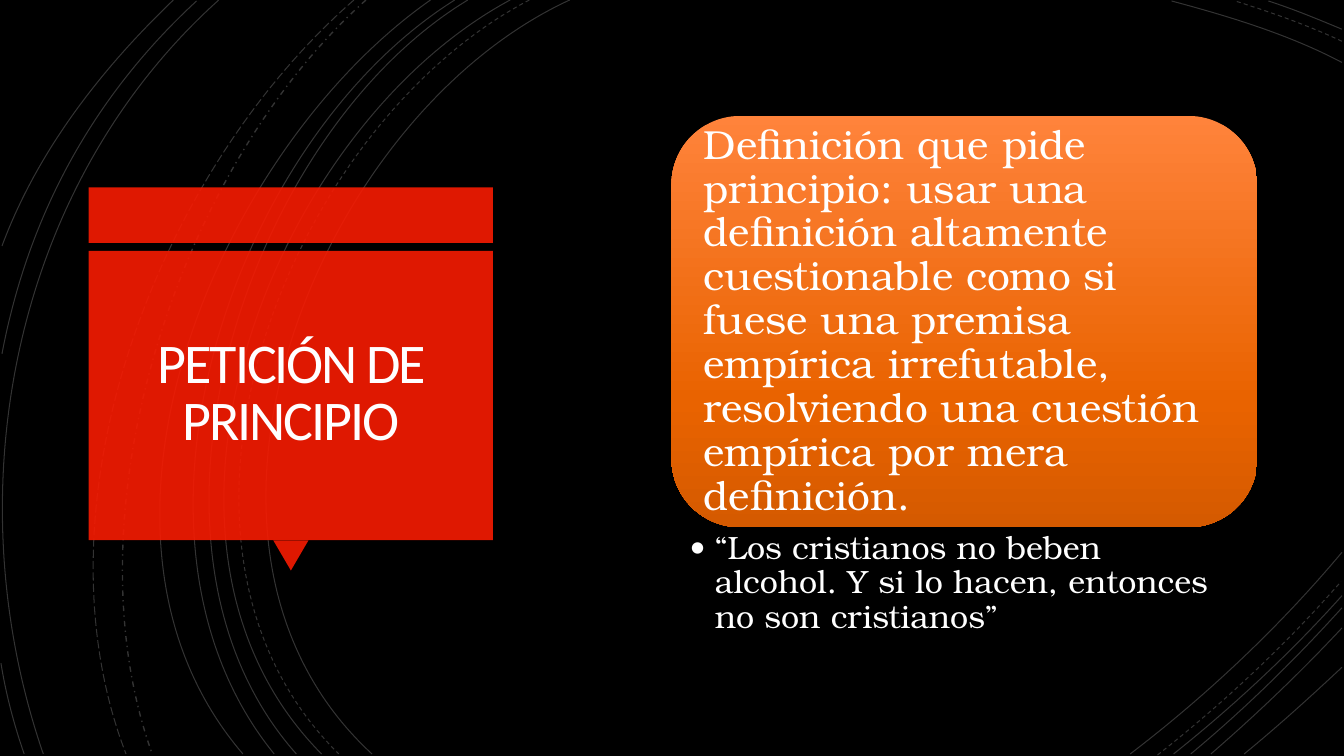
import copy

import pptx
import pptx.dml.color
import pptx.enum.dml
import pptx.enum.shapes
import pptx.enum.text
import pptx.oxml
import pptx.oxml.ns
import pptx.util

PX = 9144  # EMU per px, 100 px to the inch
SLIDE_WIDTH, SLIDE_HEIGHT = 1333, 750
SHAPE = pptx.enum.shapes.MSO_SHAPE
DASH = pptx.enum.dml.MSO_LINE
ANCHOR = pptx.enum.text.MSO_ANCHOR
ALIGN = pptx.enum.text.PP_ALIGN
HEADING_FONT, BODY_FONT = "Calibri", "TeX Gyre Bonum"
WHITE, RED, BLACK, NEAR_BLACK = "FFFFFF", "F81B02", "000000", "000001"

# Each arc: start, two control points and end, in px, grouped by dash style
ARCS = {
    DASH.SOLID: [
        (565, 0, 315, 115, 143, 540, 369, 748),
        (506, 0, 270, 127, 110, 537, 319, 748),
        (464, 0, 244, 133, 110, 541, 294, 748),
        (451, 0, 231, 138, 97, 533, 272, 748),
        (427, 0, 217, 147, 53, 529, 241, 748),
        (217, 0, 11, 185, -46, 490, 43, 748),
        (195, 1, 92, 96, 28, 214, 2, 351),
        (172, 0, 100, 69, 37, 150, 2, 244),
        (1, 658, 6, 689, 14, 719, 24, 748),
        (1331, 62, 1278, 34, 1218, 16, 1162, 1),
        (1331, 29, 1307, 19, 1283, 9, 1258, 1),
        (1121, 748, 1197, 690, 1269, 622, 1331, 548),
        (1164, 748, 1223, 701, 1280, 648, 1331, 591),
        (1181, 748, 1234, 704, 1284, 655, 1331, 603),
        (1201, 748, 1246, 709, 1290, 667, 1331, 623),
        (1234, 748, 1267, 721, 1299, 692, 1331, 662),
    ],
    DASH.DASH: [
        (525, 0, 285, 125, 123, 537, 336, 748),
        (1331, 41, 1297, 25, 1260, 12, 1225, 1),
        (1148, 749, 1213, 698, 1275, 640, 1330, 577),
    ],
    DASH.DASH_DOT: [(363, 0, 176, 166, 65, 509, 151, 748)],
    DASH.LONG_DASH: [(351, 0, 157, 169, 29, 499, 125, 748)],
}


def color(hex_string):
    return pptx.dml.color.RGBColor.from_string(hex_string)


def emu(*lengths):
    return [length * PX for length in lengths]


def set_opacity(element, percent):
    """Make the solid colour inside a fill or line element partly transparent."""
    rgb = element.find(".//" + pptx.oxml.ns.qn("a:srgbClr"))
    rgb.append(pptx.oxml.parse_xml(
        f'<a:alpha {pptx.oxml.ns.nsdecls("a")} val="{percent * 1000}"/>'))


def add_curve(slide, arc):
    """Add an open freeform made of one cubic curve."""
    start, *others = zip(arc[::2], arc[1::2])
    builder = slide.shapes.build_freeform(*start, scale=PX)
    builder.add_line_segments(others, close=False)
    curve = builder.convert_to_shape()
    outline = curve._element.spPr.find(".//" + pptx.oxml.ns.qn("a:path"))
    bezier = pptx.oxml.parse_xml(f'<a:cubicBezTo {pptx.oxml.ns.nsdecls("a")}/>')
    for segment in outline.findall(pptx.oxml.ns.qn("a:lnTo")):
        bezier.append(segment[0])
        outline.remove(segment)
    outline.append(bezier)
    return curve


def draw_arcs(slide):
    for dash, arcs in ARCS.items():
        for arc in arcs:
            curve = add_curve(slide, arc)
            curve.shadow.inherit = False
            curve.fill.background()
            curve.line.color.rgb = color(WHITE)
            curve.line.width = pptx.util.Pt(1 if dash == DASH.DASH_DOT else 0.75)
            curve.line.dash_style = dash
            set_opacity(curve.line._get_or_add_ln(), 20)


def add_plain_shape(slide, kind, box, hex_string, opacity=100):
    shape = slide.shapes.add_shape(kind, *emu(*box))
    shape.shadow.inherit = False
    shape.line.fill.background()
    shape.fill.solid()
    shape.fill.fore_color.rgb = color(hex_string)
    if opacity < 100:
        set_opacity(shape._element.spPr, opacity)
    return shape


def draw_backdrop(slide, left, top, width, height):
    # Full background and the darker right side
    add_plain_shape(slide, SHAPE.RECTANGLE, (left, top, width, height), BLACK)
    add_plain_shape(slide, SHAPE.RECTANGLE,
                    (left + 577, top, width - 577, height), NEAR_BLACK, 85)


def write_text(shape, text, size, font, insets, anchor, line_spacing,
               align=ALIGN.LEFT, hex_string=WHITE):
    frame = shape.text_frame
    frame.text = text
    frame.word_wrap = True
    frame.auto_size = pptx.enum.text.MSO_AUTO_SIZE.NONE
    frame.vertical_anchor = anchor
    (frame.margin_left, frame.margin_top,
     frame.margin_right, frame.margin_bottom) = emu(*insets)
    paragraph = frame.paragraphs[0]
    paragraph.alignment = align
    paragraph.line_spacing = line_spacing
    run = paragraph.runs[0]
    run.font.size = pptx.util.Pt(size)
    run.font.name = font
    run.font.color.rgb = color(hex_string)
    return paragraph


def draw_title(slide, left, top, width, height):
    # Red banner, pointer and panel
    panel_top, panel_height = top + 63, height - 93
    parts = [
        (SHAPE.RECTANGLE, (left, top, width, 55), 0),
        (SHAPE.ISOSCELES_TRIANGLE, (left + 183, top + height - 30, 35, 30), 180),
        (SHAPE.RECTANGLE, (left, panel_top, width, panel_height), 0),
    ]
    for kind, box, rotation in parts:
        part = add_plain_shape(slide, kind, box, RED, 90)
        part.rotation = rotation

    # Title placeholder, moved above the panel
    title = slide.shapes.title
    title.left, title.top, title.width, title.height = emu(
        left + 9, panel_top + 9, width - 18, panel_height - 19)
    slide.shapes._spTree.append(title._element)
    paragraph = write_text(title, "PETICIÓN DE PRINCIPIO", 40, HEADING_FONT,
                           (25, 25, 25, 25), ANCHOR.MIDDLE, 0.85, ALIGN.CENTER,
                           "FFFEFF")
    paragraph.runs[0]._r.get_or_add_rPr().set("spc", "-150")


def draw_definition(slide, left, top, width, height):
    # Orange card
    stops = [(0, "FF833B"), (0.69, "E96300"), (1, "D55A00")]
    card = add_plain_shape(slide, SHAPE.ROUNDED_RECTANGLE,
                           (left, top, width, height), stops[0][1])
    card.fill.gradient()
    card.fill.gradient_angle = 270
    stop_list = card._element.spPr.find(".//" + pptx.oxml.ns.qn("a:gsLst"))
    stop_list.insert(1, copy.deepcopy(stop_list[0]))
    for stop, (position, hex_string) in zip(card.fill.gradient_stops, stops):
        stop.position = position
        stop.color.rgb = color(hex_string)

    # Definition inside the card
    definition = slide.shapes.add_textbox(
        *emu(left + 20, top + 20, width - 40, height - 40))
    write_text(definition,
               "Definición que pide principio: usar una definición altamente "
               "cuestionable como si fuese una premisa empírica irrefutable, "
               "resolviendo una cuestión empírica por mera definición.",
               29, BODY_FONT, (12, 12, 12, 12), ANCHOR.MIDDLE, 0.9)

    # Bulleted example under the card
    example = slide.shapes.add_textbox(*emu(left, top + height, width, 112))
    paragraph = write_text(example,
                           "“Los cristianos no beben alcohol. Y si lo hacen, "
                           "entonces no son cristianos”",
                           23, BODY_FONT, (18, 4, 23, 4), ANCHOR.TOP, 0.9)
    properties = paragraph._p.get_or_add_pPr()
    indent = 25 * PX
    properties.set("lvl", "1")
    properties.set("marL", str(indent))
    properties.set("indent", str(-indent))
    for bullet in (f'buFont {pptx.oxml.ns.nsdecls("a")} typeface="{HEADING_FONT}"',
                   f'buChar {pptx.oxml.ns.nsdecls("a")} char="•"'):
        properties.append(pptx.oxml.parse_xml(f"<a:{bullet}/>"))


def main():
    presentation = pptx.Presentation()
    presentation.slide_width, presentation.slide_height = emu(SLIDE_WIDTH, SLIDE_HEIGHT)
    slide = presentation.slides.add_slide(presentation.slide_layouts[5])
    slide.background.fill.solid()
    slide.background.fill.fore_color.rgb = color(BLACK)
    draw_backdrop(slide, 0, 0, SLIDE_WIDTH, SLIDE_HEIGHT)
    draw_arcs(slide)
    draw_title(slide, 88, 186, 401, 380)
    draw_definition(slide, 666, 115, 581, 408)
    presentation.save("out.pptx")


if __name__ == "__main__":
    main()
